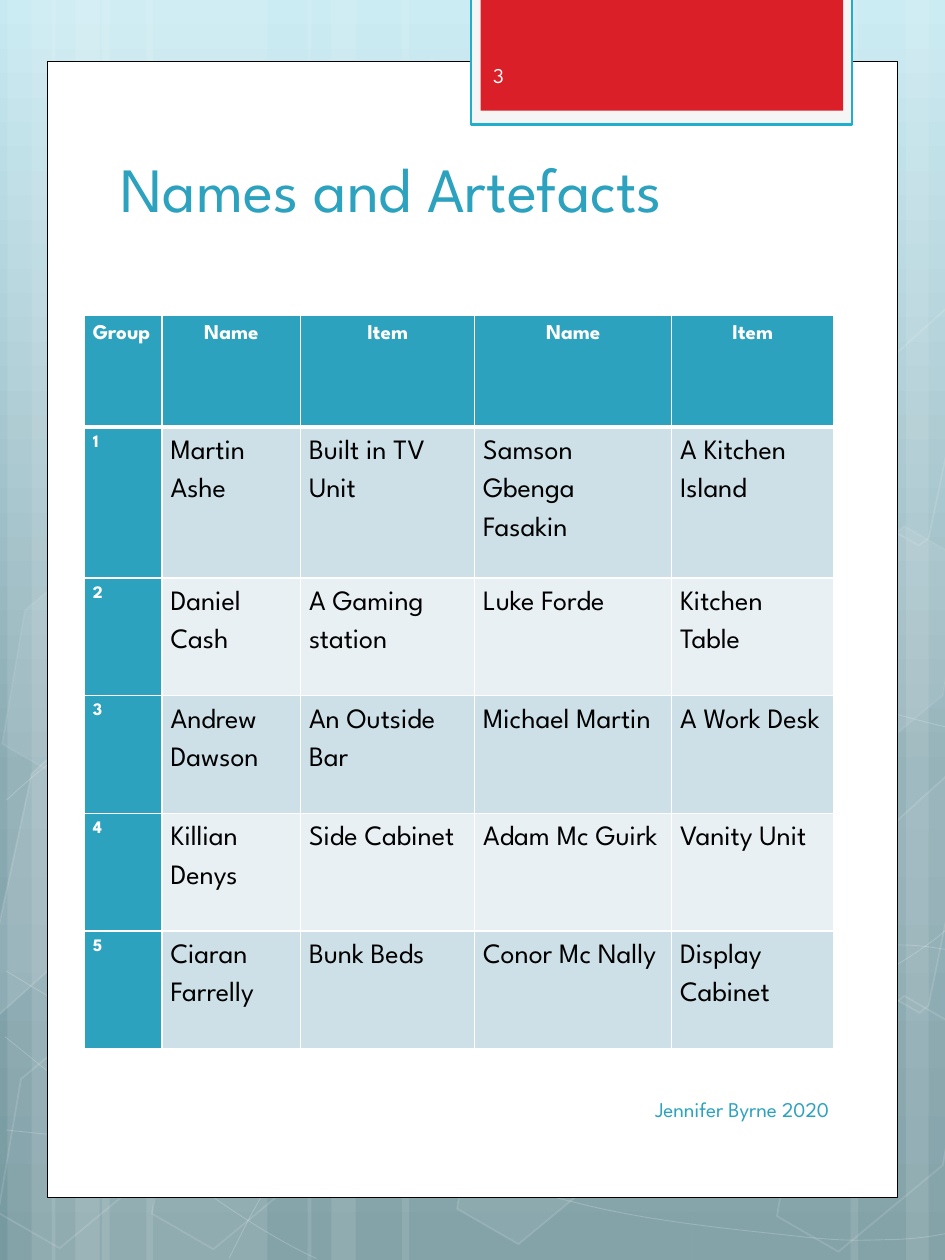
import copy

import pptx
import pptx.dml.color
import pptx.enum.shapes
import pptx.enum.text
import pptx.oxml
import pptx.oxml.ns
import pptx.util

Cm, Pt = pptx.util.Cm, pptx.util.Pt
SHAPES = pptx.enum.shapes.MSO_SHAPE
ALIGN = pptx.enum.text.PP_ALIGN
ANCHOR = pptx.enum.text.MSO_ANCHOR
NAMESPACE = pptx.oxml.ns.nsdecls("a")

# All lengths are in centimetres, opacities in percent.
WIDTH, HEIGHT = 19.05, 25.4
FONT = "League Spartan"
TEAL, WHITE, BLACK = "2DA2BF", "FFFFFF", "000000"
BANDS = ["CDE0E8", "E8F0F4"]
BACKGROUND = [(0, "C7EAF2"), (0.62, "8BABB3"), (1, "7799A0")]

HEADINGS = ["Group", "Name", "Item", "Name", "Item"]
GROUPS = [
    ("1", "Martin Ashe", "Built in TV Unit", "Samson Gbenga Fasakin", "A Kitchen Island"),
    ("2", "Daniel Cash", "A Gaming station", "Luke Forde", "Kitchen Table"),
    ("3", "Andrew Dawson", "An Outside Bar", "Michael Martin", "A Work Desk"),
    ("4", "Killian Denys", "Side Cabinet", "Adam Mc Guirk", "Vanity Unit"),
    ("5", "Ciaran Farrelly", "Bunk Beds", "Conor Mc Nally", "Display Cabinet"),
]
COLUMN_WIDTHS = [1.57, 2.79, 3.51, 3.97, 3.27]
ROW_HEIGHTS = [2.26, 3.01] + [2.37] * 4

# left, width
STRIPES = [
    (2.06, 3.33), (0.15, 0.97), (0.64, 1.57), (2.95, 3.33), (1.04, 0.97), (1.52, 1.57),
    (13.97, 3.33), (18.26, 0.97), (17.15, 1.57), (8.1, 5.87), (6.2, 0.97), (6.68, 1.57),
]
# start point, then segments: an end point, with two control points before it if curved
CURVES = [
    [(0.13, 22.78), (1.17, 22.89, 2.18, 23.01, 3.63, 22.96), (5.05, 22.91, 6.81, 22.86, 8.71, 22.53),
     (10.64, 22.17, 13.34, 21.56, 15.09, 20.9), (16.81, 20.24, 18.62, 19.23, 19.18, 18.64)],
    [(0.13, 16.13), (0.69, 15.62, 1.24, 15.11, 2.31, 14.61), (3.4, 14.1, 4.93, 13.36, 6.63, 13.11),
     (8.31, 12.85, 10.36, 12.85, 12.45, 13.11), (14.55, 13.36, 18.03, 14.43, 19.18, 14.68)],
    [(0.1, 20.9), (2.41, 22.76, 4.7, 24.61, 6.38, 25.37)],
    [(0.13, 19.58), (0.74, 19.94, 1.32, 20.32, 2.44, 20.85), (3.56, 21.39, 5.21, 22.2, 6.78, 22.78),
     (8.38, 23.37, 10.39, 23.95, 11.96, 24.33), (13.54, 24.69, 15.24, 24.82, 16.23, 24.94),
     (17.25, 25.04, 17.5, 24.99, 18.01, 24.99), (18.49, 24.97, 18.85, 24.92, 19.18, 24.84)],
    [(4.62, 25.37), (4.95, 24.69, 5.28, 24.03, 5.74, 23.39), (6.22, 22.78, 6.86, 22.1, 7.39, 21.64),
     (7.92, 21.18, 8.26, 20.98, 8.94, 20.62), (9.65, 20.29, 10.92, 19.81, 11.58, 19.58),
     (12.27, 19.35, 12.37, 19.35, 12.95, 19.25), (13.54, 19.18, 14.48, 19.08, 15.14, 19.05),
     (15.77, 19, 16.89, 19.05, 16.89, 19.05), (18.14, 19.05),
     (18.49, 19.05, 18.82, 19.1, 19, 19.13), (19.15, 19.15, 19.1, 19.15, 19.15, 19.18)],
]
# left, top, fill opacity, line opacity
HEXAGONS = [
    (6.38, 1.19, 4, 8), (9.45, 19.94, 6, 12), (0.2, 20.02, 0, 12), (0.28, 10.57, 7, 8),
    (1.78, 15.29, 0, 12), (3.3, 20.04, 0, 12), (1.83, 5.79, 0, 12), (14.35, 15.34, 10, 12),
    (15.9, 20.09, 0, 12), (15.9, 10.62, 7, 8),
]
# fill opacity, corners
CUT_HEXAGONS = [
    (10, [(0.64, 15.6), (0.94, 15.32), (2.39, 16.15), (1.83, 18.8), (-0.18, 20.6), (-0.41, 20.47)]),
    (4, [(17.65, 16.94), (19.63, 15.14), (19.76, 15.21), (18.72, 20.27), (18.54, 20.42), (17.07, 19.58)]),
    (0, [(17.63, 7.52), (19.63, 5.72), (19.79, 5.79), (18.72, 10.85), (18.52, 11), (17.07, 10.16)]),
]
# left, top, width, height, fill, line colour, line width
PANELS = [
    (0.96, 1.24, 17.14, 22.91, WHITE, BLACK, 0.5),
    (9.5, -0.08, 7.67, 2.59, "F5F5F5", "1FAECD", 1.25),
    (9.69, -0.08, 7.31, 2.31, "DA1F28", None, 0),
]
# text, left, top, width, height, size, colour, alignment, anchor
TITLE = ("Names and Artefacts", 2.18, 2.45, 14.63, 2.21, 36, TEAL, ALIGN.LEFT, ANCHOR.BOTTOM)
FOOTERS = [
    ("Jennifer Byrne 2020", 9.68, 21.68, 7.29, 1.35, 12, TEAL, ALIGN.RIGHT, ANCHOR.MIDDLE),
    ("3", 9.69, 0.84, 2.77, 1.35, 12, "FEFEFE", ALIGN.LEFT, ANCHOR.MIDDLE),
]


def colour(value):
    return pptx.dml.color.RGBColor.from_string(value)


def paint(shape, fill, line=None, line_width=0, fill_opacity=100, line_opacity=100):
    shape.shadow.inherit = False
    for target, value, opacity, place in (
        (shape.fill, fill, fill_opacity, "./a:solidFill/a:srgbClr"),
        (shape.line.fill, line, line_opacity, "./a:ln/a:solidFill/a:srgbClr"),
    ):
        if value is None or opacity == 0:
            target.background()
            continue
        target.solid()
        target.fore_color.rgb = colour(value)
        if opacity < 100:
            tint = shape.element.spPr.xpath(place)[0]
            tint.append(pptx.oxml.parse_xml(f'<a:alpha {NAMESPACE} val="{opacity * 1000}"/>'))
    if line:
        shape.line.width = Pt(line_width)


def add_outline(page, points, close):
    """Draw straight segments on a grid of a hundredth of a centimetre."""
    grid = [(round(x * 100), round(y * 100)) for x, y in points]
    builder = page.shapes.build_freeform(*grid[0], scale=Cm(0.01))
    builder.add_line_segments(grid[1:], close=close)
    return builder.convert_to_shape()


def add_curve(page, start, *segments):
    shape = add_outline(page, [start] + [segment[-2:] for segment in segments], False)
    origin = shape.element.xpath(".//a:moveTo/a:pt")[0]
    shift_x = int(origin.get("x")) - round(start[0] * 100)
    shift_y = int(origin.get("y")) - round(start[1] * 100)
    for straight, segment in zip(shape.element.xpath(".//a:lnTo"), segments):
        if len(segment) == 2:
            continue
        points = "".join(
            f'<a:pt x="{round(x * 100) + shift_x}" y="{round(y * 100) + shift_y}"/>'
            for x, y in zip(segment[::2], segment[1::2]))
        bend = pptx.oxml.parse_xml(f"<a:cubicBezTo {NAMESPACE}>{points}</a:cubicBezTo>")
        straight.getparent().replace(straight, bend)
    return shape


def write(frame, text, size, value, align, bold=False):
    frame.text = text
    para = frame.paragraphs[0]
    para.alignment = align
    font = para.runs[0].font
    font.name, font.size, font.bold = FONT, Pt(size), bold
    font.color.rgb = colour(value)
    return para


def add_text(page, text, left, top, width, height, size, value, align, anchor):
    box = page.shapes.add_textbox(Cm(left), Cm(top), Cm(width), Cm(height))
    box.text_frame.word_wrap = True
    box.text_frame.vertical_anchor = anchor
    write(box.text_frame, text, size, value, align)


def add_borders(cell, widths):
    """Draw white borders; widths maps L, R, T and B to points."""
    for place, (side, width) in enumerate(widths.items()):
        cell._tc.get_or_add_tcPr().insert(place, pptx.oxml.parse_xml(
            f'<a:ln{side} {NAMESPACE} w="{Pt(width)}"><a:solidFill>'
            f'<a:srgbClr val="{WHITE}"/></a:solidFill></a:ln{side}>'))


def add_background(page):
    fill = page.background.fill
    fill.gradient()
    fill.gradient_angle = 270
    stop_list = page.element.xpath(".//a:gsLst")[0]
    stop_list.append(copy.deepcopy(stop_list[-1]))
    for stop, (position, value) in zip(fill.gradient_stops, BACKGROUND):
        stop.position = position
        stop.color.rgb = colour(value)


def add_pattern(page):
    for left, width in STRIPES:
        stripe = page.shapes.add_shape(SHAPES.RECTANGLE, Cm(left), 0, Cm(width), Cm(HEIGHT))
        paint(stripe, WHITE, fill_opacity=10)
    for curve in CURVES:
        paint(add_curve(page, *curve), None, WHITE, 0.5, line_opacity=20)
    for left, top, fill_opacity, line_opacity in HEXAGONS:
        hexagon = page.shapes.add_shape(SHAPES.HEXAGON, Cm(left), Cm(top), Cm(3.33), Cm(5.13))
        hexagon.adjustments[0] = 0.285
        hexagon.rotation = 30
        paint(hexagon, WHITE, WHITE, 1, fill_opacity, line_opacity)
    for fill_opacity, corners in CUT_HEXAGONS:
        paint(add_outline(page, corners, True), WHITE, WHITE, 1, fill_opacity, 12)


def add_group_table(page):
    rows = [HEADINGS, *GROUPS]
    frame = page.shapes.add_table(len(rows), len(HEADINGS), Cm(1.7), Cm(6.35),
                                  Cm(sum(COLUMN_WIDTHS)), Cm(sum(ROW_HEIGHTS)))
    table = frame.table
    for column, width in zip(table.columns, COLUMN_WIDTHS):
        column.width = Cm(width)
    for r, row in enumerate(rows):
        table.rows[r].height = Cm(ROW_HEIGHTS[r])
        for c, text in enumerate(row):
            cell = table.cell(r, c)
            cell.margin_left = cell.margin_right = Cm(0.17)
            cell.margin_top = cell.margin_bottom = 0
            strong = r == 0 or c == 0
            cell.fill.solid()
            cell.fill.fore_color.rgb = colour(TEAL if strong else BANDS[(r - 1) % 2])
            size = 12 if r == 0 else 10 if c == 0 else 16
            align = ALIGN.CENTER if r == 0 and c > 0 else ALIGN.LEFT
            para = write(cell.text_frame, text, size, WHITE if strong else BLACK, align, strong)
            para.line_spacing = 1.5
            add_borders(cell, {"L": 1, "R": 1, "T": 3 if r == 1 else 1, "B": 3 if r == 0 else 1})


def main():
    deck = pptx.Presentation()
    deck.slide_width, deck.slide_height = Cm(WIDTH), Cm(HEIGHT)
    page = deck.slides.add_slide(deck.slide_layouts[6])
    add_background(page)
    add_pattern(page)
    for left, top, width, height, *style in PANELS:
        panel = page.shapes.add_shape(SHAPES.RECTANGLE, Cm(left), Cm(top), Cm(width), Cm(height))
        paint(panel, *style)
    add_text(page, *TITLE)
    add_group_table(page)
    for footer in FOOTERS:
        add_text(page, *footer)
    deck.save("out.pptx")


if __name__ == "__main__":
    main()
